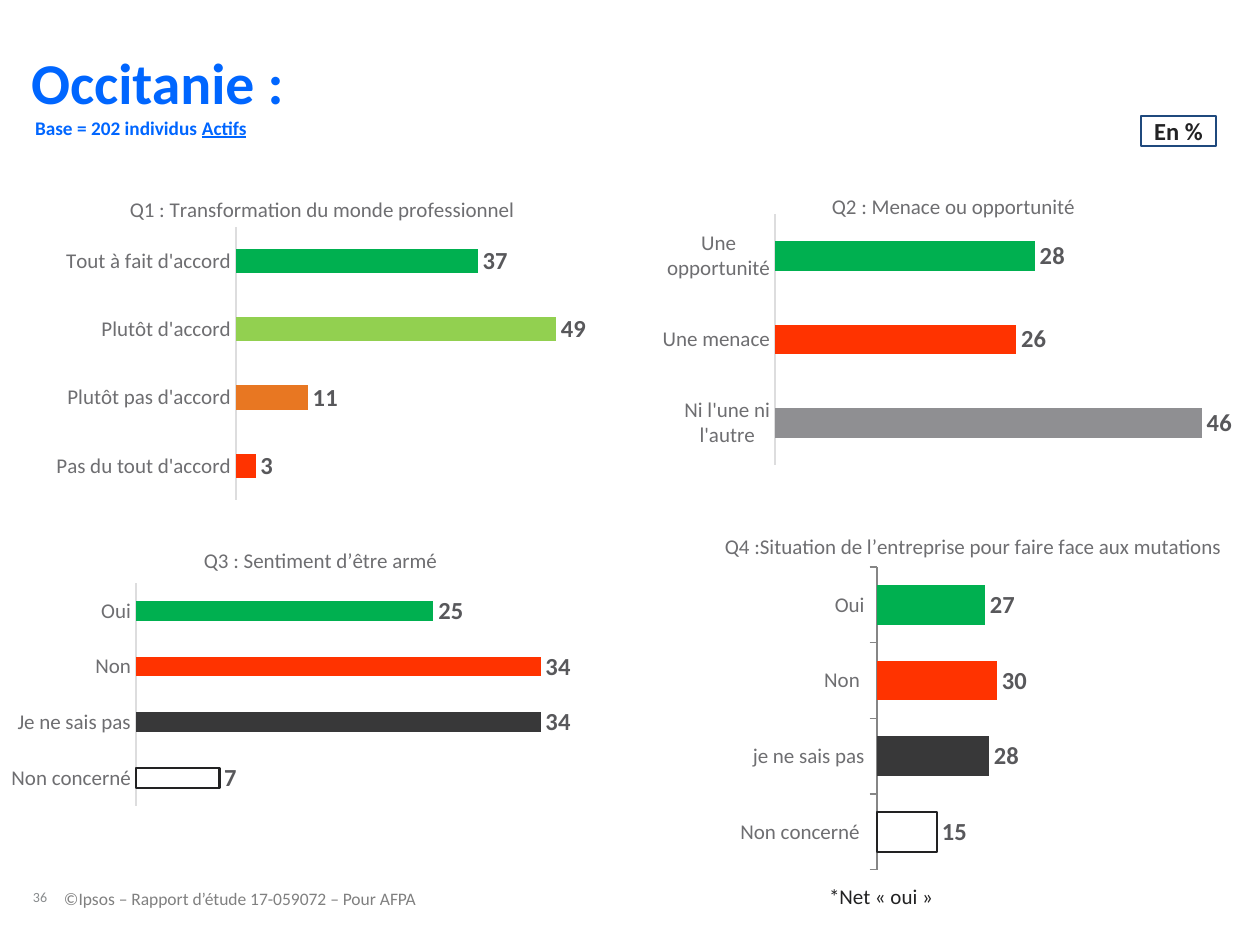
"""Build the Occitanie survey slide with four bar charts."""
from dataclasses import dataclass
from typing import Optional

from lxml import etree
from pptx import Presentation
from pptx import util as u
from pptx.chart.data import CategoryChartData
from pptx.dml.color import RGBColor
from pptx.enum import chart as ch
from pptx.enum import shapes, text

DPI = 126
FONT = "Calibri"
BLUE = RGBColor(0x00, 0x66, 0xFF)
NAVY = RGBColor(0x1F, 0x49, 0x7D)
INK = RGBColor(0x22, 0x22, 0x23)
LABEL = RGBColor(0x58, 0x58, 0x5B)
AXIS_TEXT = RGBColor(0x6E, 0x6E, 0x71)
AXIS_PALE = RGBColor(0xDD, 0xDD, 0xDE)
AXIS_DARK = RGBColor(0x86, 0x86, 0x86)
FOOTER = RGBColor(0x80, 0x80, 0x80)
NUMBER = RGBColor(0x88, 0x8B, 0x8D)
GREEN = RGBColor(0x00, 0xB0, 0x50)
LIME = RGBColor(0x92, 0xD0, 0x50)
ORANGE = RGBColor(0xE8, 0x77, 0x22)
RED = RGBColor(0xFF, 0x33, 0x00)
GREY = RGBColor(0x8F, 0x8F, 0x92)
CHARCOAL = RGBColor(0x38, 0x38, 0x39)
CHART_NS = "http://schemas.openxmlformats.org/drawingml/2006/chart"


@dataclass(frozen=True)
class Answer:
    label: str
    value: int
    color: Optional[RGBColor]


@dataclass(frozen=True)
class Question:
    title: str
    frame: tuple[int, int, int, int]
    title_at: tuple[int, int]
    plot: tuple[int, int, int, int]
    maximum: int
    answers: tuple[Answer, ...]
    gap: int = 182
    axis_color: RGBColor = AXIS_PALE
    tick: ch.XL_TICK_MARK = ch.XL_TICK_MARK.NONE


@dataclass(frozen=True)
class Note:
    frame: tuple[int, int, int, int]
    spans: tuple[str, ...]
    size: int
    color: RGBColor
    bold: bool = False
    line_spacing: Optional[float] = None
    anchor: text.MSO_ANCHOR = text.MSO_ANCHOR.TOP
    align: text.PP_ALIGN = text.PP_ALIGN.LEFT
    border: Optional[RGBColor] = None


QUESTIONS = (
    Question("Q1 : Transformation du monde professionnel", (44, 168, 595, 339),
             (126, 191), (236, 227, 392, 273), 60,
             (Answer("Pas du tout d'accord", 3, RED), Answer("Plutôt pas d'accord", 11, ORANGE),
              Answer("Plutôt d'accord", 49, LIME), Answer("Tout à fait d'accord", 37, GREEN))),
    Question("Q2 : Menace ou opportunité", (640, 168, 620, 339),
             (828, 188), (775, 214, 464, 251), 50,
             (Answer("Ni l'une ni l'autre", 46, GREY), Answer("Une menace", 26, RED),
              Answer("Une opportunité", 28, GREEN))),
    Question("Q3 : Sentiment d’être armé", (0, 522, 640, 328),
             (200, 542), (136, 583, 476, 223), 40,
             (Answer("Non concerné", 7, None), Answer("Je ne sais pas", 34, CHARCOAL),
              Answer("Non", 34, RED), Answer("Oui", 25, GREEN))),
    Question("Q4 :Situation de l’entreprise pour faire face aux mutations", (620, 517, 640, 368),
             (721, 528), (877, 567, 360, 303), 90,
             (Answer("Non concerné ", 15, None), Answer("je ne sais pas", 28, CHARCOAL),
              Answer("Non ", 30, RED), Answer("Oui", 27, GREEN)),
             90, AXIS_DARK, ch.XL_TICK_MARK.OUTSIDE),
)

NOTES = (
    Note((33, 861, 43, 44), ("36",), 8, NUMBER, line_spacing=0.85,
         anchor=text.MSO_ANCHOR.BOTTOM),
    Note((31, 55, 1192, 63), ("Occitanie :",), 33, BLUE, True, 0.9),
    Note((35, 116, 307, 47), ("Base = 202 individus ", "Actifs"), 11, BLUE, True),
    Note((829, 884, 248, 25), ("*Net «\u00a0oui\u00a0»",), 12, INK),
    Note((64, 888, 648, 82), ("©Ipsos – Rapport d’étude 17-059072 – Pour AFPA",), 10, FOOTER),
    Note((1141, 116, 75, 30), ("En %",), 14, INK, True,
         align=text.PP_ALIGN.CENTER, border=NAVY),
)


def px(length: int) -> int:
    """Turn pixels into EMU."""
    return u.Emu(round(length * 914400 / DPI))


def apply(target, **values) -> None:
    """Set each given attribute on the target."""
    for name, value in values.items():
        setattr(target, name, value)


def style_font(font, size: int, color: RGBColor, bold: bool = False) -> None:
    """Give a font the slide's typeface, a size and a colour."""
    apply(font, name=FONT, size=u.Pt(size), bold=bold)
    font.color.rgb = color


def place(parent, index: int, values: dict[str, float], inner: bool = False) -> None:
    """Give a chart part a manual layout in fractions of the chart."""
    for old in parent.findall(f"{{{CHART_NS}}}layout"):
        parent.remove(old)
    layout = etree.Element(f"{{{CHART_NS}}}layout")
    manual = etree.SubElement(layout, f"{{{CHART_NS}}}manualLayout")
    settings = {"layoutTarget": "inner"} if inner else {}
    settings |= {"xMode": "edge", "yMode": "edge"}
    settings |= {key: f"{value:.4f}" for key, value in values.items()}
    for key, value in settings.items():
        etree.SubElement(manual, f"{{{CHART_NS}}}{key}", val=value)
    parent.insert(index, layout)


def add_question(page, question: Question) -> None:
    """Draw one bar chart with its title and coloured bars."""
    data = CategoryChartData()
    data.categories = [answer.label for answer in question.answers]
    data.add_series("Series 1", [answer.value for answer in question.answers])
    frame = page.shapes.add_chart(ch.XL_CHART_TYPE.BAR_CLUSTERED, *map(px, question.frame), data)
    chart = frame.chart
    apply(chart, has_legend=False, has_title=True)
    style_font(chart.font, 10, INK)

    left, top, width, height = question.frame
    title_frame = chart.chart_title.text_frame
    title_frame.text = question.title
    style_font(title_frame.paragraphs[0].runs[0].font, 12, AXIS_TEXT)
    title_left, title_top = question.title_at
    place(title_frame._txBody.getparent().getparent(), 1,
          {"x": (title_left - left) / width, "y": (title_top - top) / height})
    plot_left, plot_top, plot_width, plot_height = question.plot
    place(chart._chartSpace.chart.plotArea, 0,
          {"x": (plot_left - left) / width, "y": (plot_top - top) / height,
           "w": plot_width / width, "h": plot_height / height}, inner=True)

    apply(chart.value_axis, visible=False, has_major_gridlines=False,
          minimum_scale=0, maximum_scale=question.maximum)
    axis = chart.category_axis
    apply(axis, major_tick_mark=question.tick, minor_tick_mark=ch.XL_TICK_MARK.NONE)
    style_font(axis.tick_labels.font, 12, AXIS_TEXT)
    axis.format.line.color.rgb = question.axis_color
    axis.format.line.width = u.Pt(0.75)

    plot = chart.plots[0]
    apply(plot, gap_width=question.gap, vary_by_categories=False, has_data_labels=True)
    apply(plot.data_labels, show_value=True, position=ch.XL_LABEL_POSITION.OUTSIDE_END)
    style_font(plot.data_labels.font, 14, LABEL, True)
    series = plot.series[0]
    series.invert_if_negative = False
    for index, answer in enumerate(question.answers):
        bar = series.points[index].format
        if answer.color is None:
            bar.fill.background()
            bar.line.color.rgb = INK
            bar.line.width = u.Pt(1.5)
        else:
            bar.fill.solid()
            bar.fill.fore_color.rgb = answer.color


def add_note(page, note: Note) -> None:
    """Draw a text box, or a bordered rectangle; any second span is underlined."""
    frame = tuple(map(px, note.frame))
    if note.border is None:
        box = page.shapes.add_textbox(*frame)
    else:
        box = page.shapes.add_shape(shapes.MSO_SHAPE.RECTANGLE, *frame)
        box.shadow.inherit = False
        box.fill.background()
        box.line.color.rgb = note.border
        box.line.width = u.Pt(1.5)
    apply(box.text_frame, word_wrap=True, vertical_anchor=note.anchor, margin_left=0,
          margin_top=0, margin_right=0, margin_bottom=0)
    para = box.text_frame.paragraphs[0]
    apply(para, alignment=note.align, line_spacing=note.line_spacing)
    for index, words in enumerate(note.spans):
        span = para.add_run()
        span.text = words
        style_font(span.font, note.size, note.color, note.bold)
        span.font.underline = index > 0


def main() -> None:
    """Build and save the deck."""
    deck = Presentation()
    apply(deck, slide_width=u.Inches(10), slide_height=u.Inches(7.5))
    page = deck.slides.add_slide(deck.slide_layouts[6])
    for question in QUESTIONS:
        add_question(page, question)
    for note in NOTES:
        add_note(page, note)
    deck.save("out.pptx")


if __name__ == "__main__":
    main()
